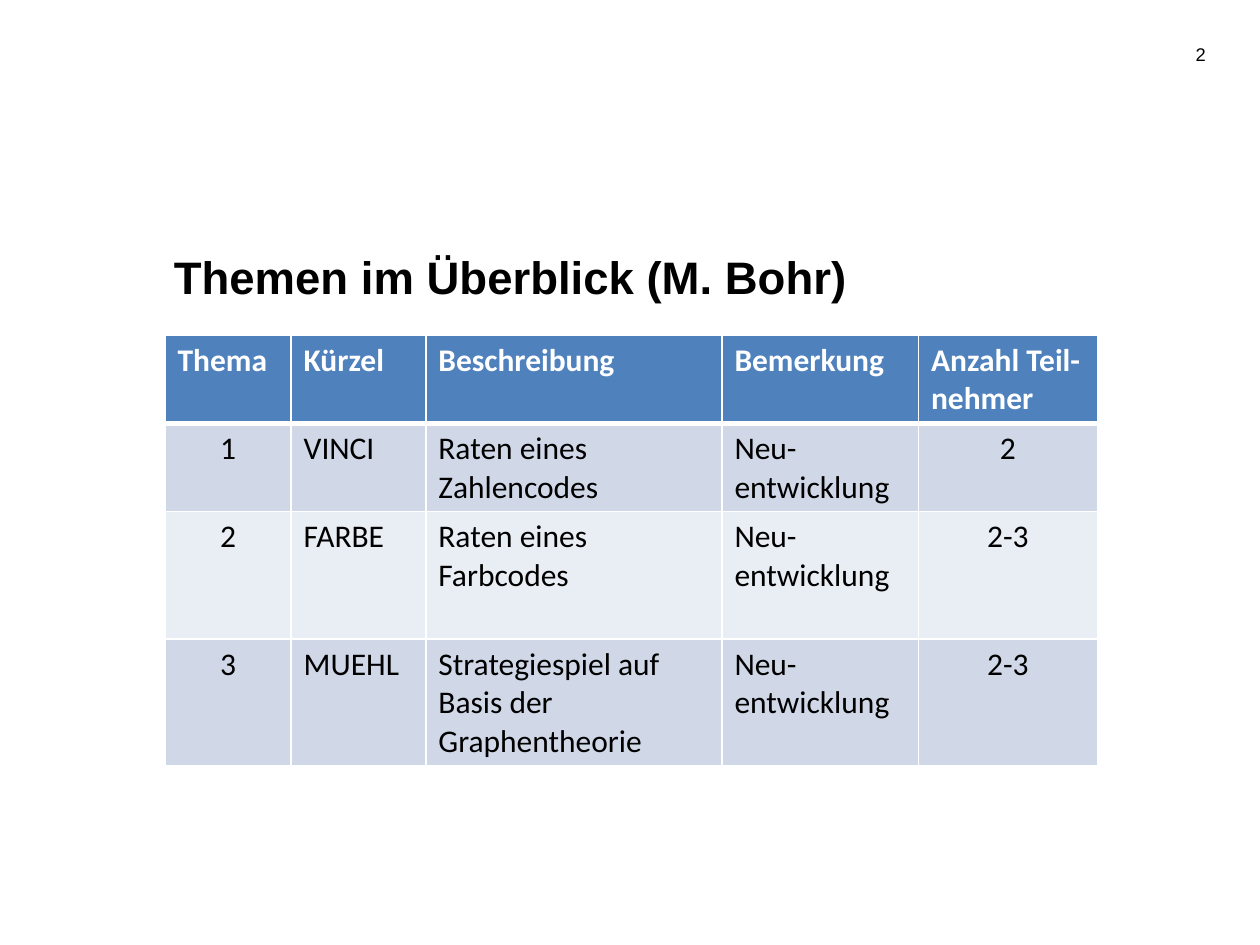
from lxml import etree
from pptx import Presentation
from pptx.dml.color import RGBColor
from pptx.enum.text import MSO_ANCHOR, PP_ALIGN
from pptx.oxml.ns import qn
from pptx.util import Inches, Pt

LEFT, CENTER, RIGHT = PP_ALIGN.LEFT, PP_ALIGN.CENTER, PP_ALIGN.RIGHT
TOP, MIDDLE = MSO_ANCHOR.TOP, MSO_ANCHOR.MIDDLE

TITLE = "Themen im Überblick (M. Bohr)"
PAGE_NUMBER = "2"
HEADER = ["Thema", "Kürzel", "Beschreibung", "Bemerkung", "Anzahl Teil-nehmer"]
TOPICS = [
    ["1", "VINCI", "Raten eines Zahlencodes", "Neu-entwicklung", "2"],
    ["2", "FARBE", "Raten eines Farbcodes", "Neu-entwicklung", "2-3"],
    ["3", "MUEHL", "Strategiespiel auf Basis der Graphentheorie", "Neu-entwicklung", "2-3"],
]
COLUMN_WIDTHS = [1, 1.07, 2.35, 1.56, 1.42]
ROW_HEIGHTS = [0.7, 0.7, 1.01, 1.01]
COLUMN_ALIGNS = [CENTER, LEFT, LEFT, LEFT, CENTER]

THEME = {
    "heading_font": "Arial", "table_font": "Calibri",
    "title_size": 26, "number_size": 10.5, "table_size": 18,
    "text": "000000", "header_text": "FFFFFF", "header_fill": "4F81BD",
    "bands": ["D0D8E8", "E9EDF4"], "border": "FFFFFF",
}


def write_text(frame, text, *, font, size, color, bold=False, align=LEFT):
    para = frame.paragraphs[0]
    para.alignment = align
    span = para.add_run()
    span.text = text
    span.font.name = font
    span.font.size = Pt(size)
    span.font.bold = bold
    span.font.color.rgb = RGBColor.from_string(color)


def add_text_box(page, area, text, *, insets, anchor=TOP, **style):
    frame = page.shapes.add_textbox(*map(Inches, area)).text_frame
    frame.word_wrap = True
    frame.vertical_anchor = anchor
    (frame.margin_left, frame.margin_top,
     frame.margin_right, frame.margin_bottom) = map(Inches, insets)
    write_text(frame, text, **style)


def add_borders(cell, widths):
    properties = cell._tc.get_or_add_tcPr()
    for side, width in widths.items():
        line = etree.SubElement(properties, qn(f"a:ln{side}"), w=str(Pt(width)))
        fill = etree.SubElement(line, qn("a:solidFill"))
        etree.SubElement(fill, qn("a:srgbClr"), val=THEME["border"])


def add_topic_table(page, left, top):
    rows = [HEADER] + TOPICS
    frame = page.shapes.add_table(
        len(rows), len(HEADER), Inches(left), Inches(top),
        Inches(sum(COLUMN_WIDTHS)), Inches(sum(ROW_HEIGHTS)))
    table = frame.table
    table.horz_banding = False
    for column, width in zip(table.columns, COLUMN_WIDTHS):
        column.width = Inches(width)
    for index, (row, height, texts) in enumerate(zip(table.rows, ROW_HEIGHTS, rows)):
        row.height = Inches(height)
        header = index == 0
        fill = THEME["header_fill"] if header else THEME["bands"][(index - 1) % 2]
        for cell, text, align in zip(row.cells, texts, COLUMN_ALIGNS):
            add_borders(cell, {"L": 1, "R": 1, "T": 3 if index == 1 else 1,
                               "B": 3 if header else 1})
            cell.fill.solid()
            cell.fill.fore_color.rgb = RGBColor.from_string(fill)
            write_text(cell.text_frame, text, font=THEME["table_font"],
                       size=THEME["table_size"], bold=header,
                       color=THEME["header_text" if header else "text"],
                       align=LEFT if header else align)


def main():
    deck = Presentation()
    deck.slide_width, deck.slide_height = Inches(10), Inches(7.5)
    page = deck.slides.add_slide(deck.slide_layouts[6])
    heading = {"font": THEME["heading_font"], "color": THEME["text"]}
    add_text_box(page, (1.34, 1.55, 7.13, 1.02), TITLE,
                 insets=(0.04, 0.46, 0.02, 0.04),
                 size=THEME["title_size"], bold=True, **heading)
    add_text_box(page, (8.94, 0.23, 0.67, 0.4), PAGE_NUMBER,
                 insets=(0.04,) * 4, anchor=MIDDLE, align=RIGHT,
                 size=THEME["number_size"], **heading)
    add_topic_table(page, 1.31, 2.66)
    deck.save("out.pptx")


if __name__ == "__main__":
    main()
